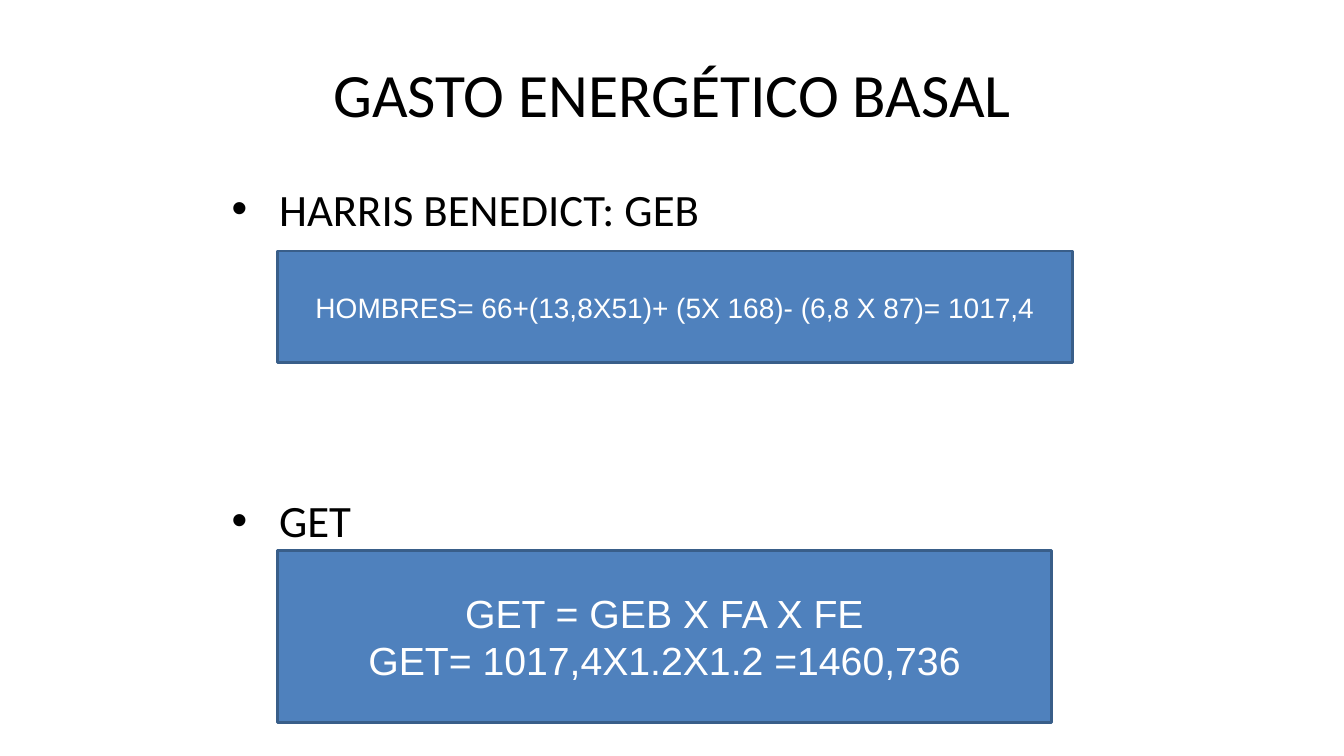
from lxml.etree import SubElement
from pptx import Presentation
from pptx.dml.color import RGBColor
from pptx.enum.shapes import MSO_SHAPE as Preset
from pptx.enum.text import MSO_ANCHOR as Anchor, PP_ALIGN as Align
from pptx.oxml.ns import qn
from pptx.util import Inches, Pt

COLORS = {"text": "000000", "box": "4F81BD", "border": "395E89", "box_text": "FFFFFF"}


def color(name):
    """Return the named colour."""
    return RGBColor.from_string(COLORS[name])


def add_run(paragraph, text, size, font_name, color_name):
    """Add one formatted run to a paragraph."""
    run = paragraph.add_run()
    run.text = text
    run.font.size = Pt(size)
    run.font.name = font_name
    run.font.color.rgb = color(color_name)


def add_centered_lines(shape, lines, size, font_name, color_name):
    """Fill a shape with lines centred both ways."""
    frame = shape.text_frame
    frame.word_wrap = True
    frame.vertical_anchor = Anchor.MIDDLE
    for index, line in enumerate(lines):
        paragraph = frame.add_paragraph() if index else frame.paragraphs[0]
        paragraph.alignment = Align.CENTER
        add_run(paragraph, line, size, font_name, color_name)


def add_title(slide, text):
    """Add the slide title."""
    shape = slide.shapes.add_textbox(Inches(2.17), Inches(0.3), Inches(9), Inches(1.25))
    add_centered_lines(shape, [text], 44, "Calibri", "text")


def add_bullets(slide, items, gap):
    """Add a bulleted list with a gap in points between its items."""
    shape = slide.shapes.add_textbox(Inches(2.17), Inches(1.75), Inches(9), Inches(4.95))
    frame = shape.text_frame
    frame.word_wrap = True
    for index, item in enumerate(items):
        paragraph = frame.add_paragraph() if index else frame.paragraphs[0]
        paragraph.space_before = Pt(gap if index else 0)
        properties = paragraph._p.get_or_add_pPr()
        properties.set("marL", str(Inches(0.5)))
        properties.set("indent", str(Inches(-0.47)))
        SubElement(properties, qn("a:buFont"), typeface="Arial")
        SubElement(properties, qn("a:buChar"), char="•")
        add_run(paragraph, item, 32, "Calibri", "text")


def add_formula_box(slide, top, width, height, lines, size):
    """Add a blue box holding formula lines."""
    shape = slide.shapes.add_shape(
        Preset.RECTANGLE, Inches(2.75), Inches(top), Inches(width), Inches(height))
    shape.shadow.inherit = False
    shape.fill.solid()
    shape.fill.fore_color.rgb = color("box")
    shape.line.color.rgb = color("border")
    shape.line.width = Pt(2)
    add_centered_lines(shape, lines, size, "Arial", "box_text")


def main():
    """Build and save the slide."""
    presentation = Presentation()
    presentation.slide_width = Inches(13.33)
    presentation.slide_height = Inches(7.5)
    slide = presentation.slides.add_slide(presentation.slide_layouts[6])
    add_title(slide, "GASTO ENERGÉTICO BASAL")
    add_bullets(slide, ["HARRIS BENEDICT: GEB", "GET"], 184)
    add_formula_box(slide, 2.49, 7.89, 1.11,
                    ["HOMBRES= 66+(13,8X51)+ (5X 168)- (6,8 X 87)= 1017,4"], 20)
    add_formula_box(slide, 5.46, 7.68, 1.71,
                    ["GET = GEB X FA X FE", "GET= 1017,4X1.2X1.2 =1460,736"], 28)
    presentation.save("out.pptx")


if __name__ == "__main__":
    main()
